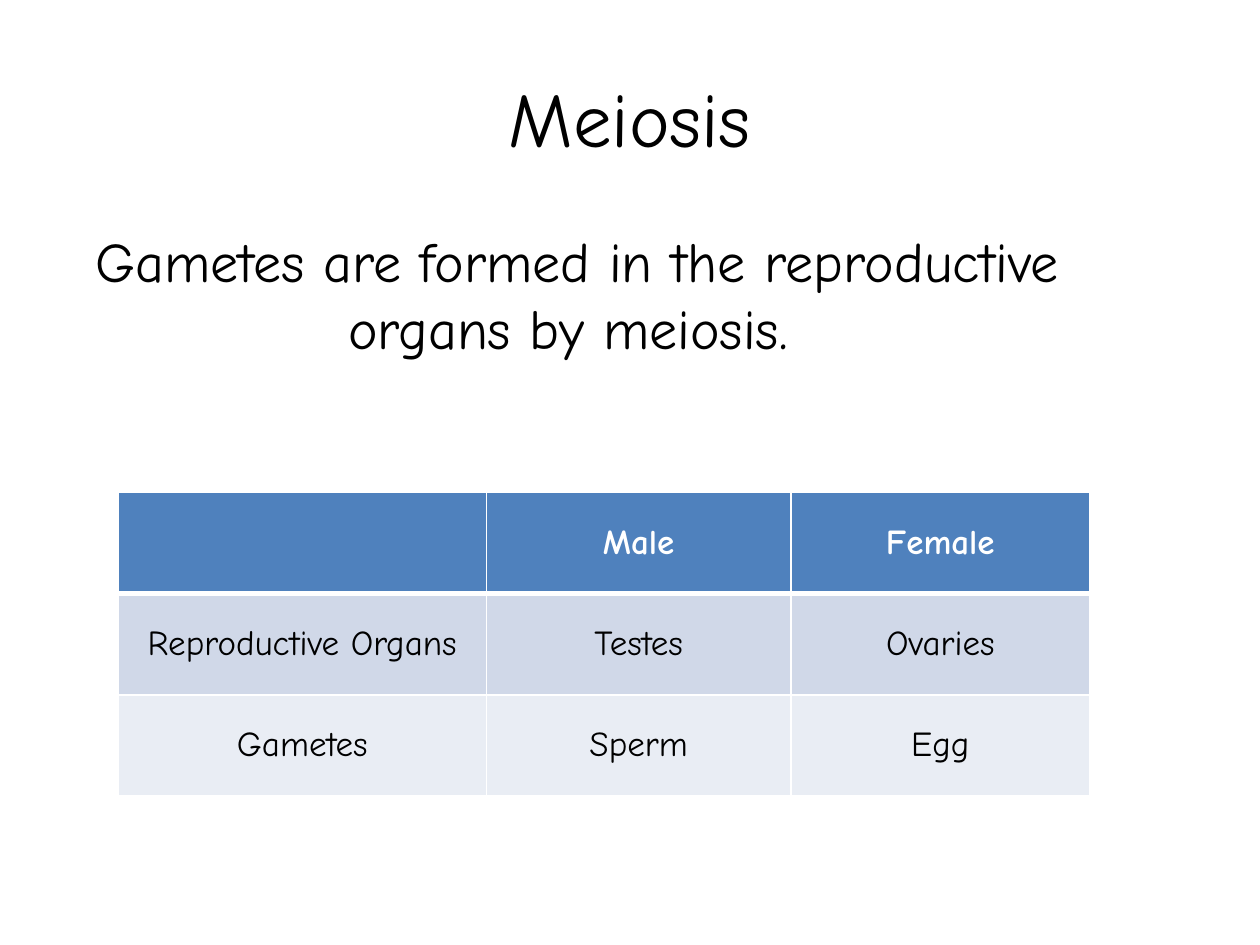
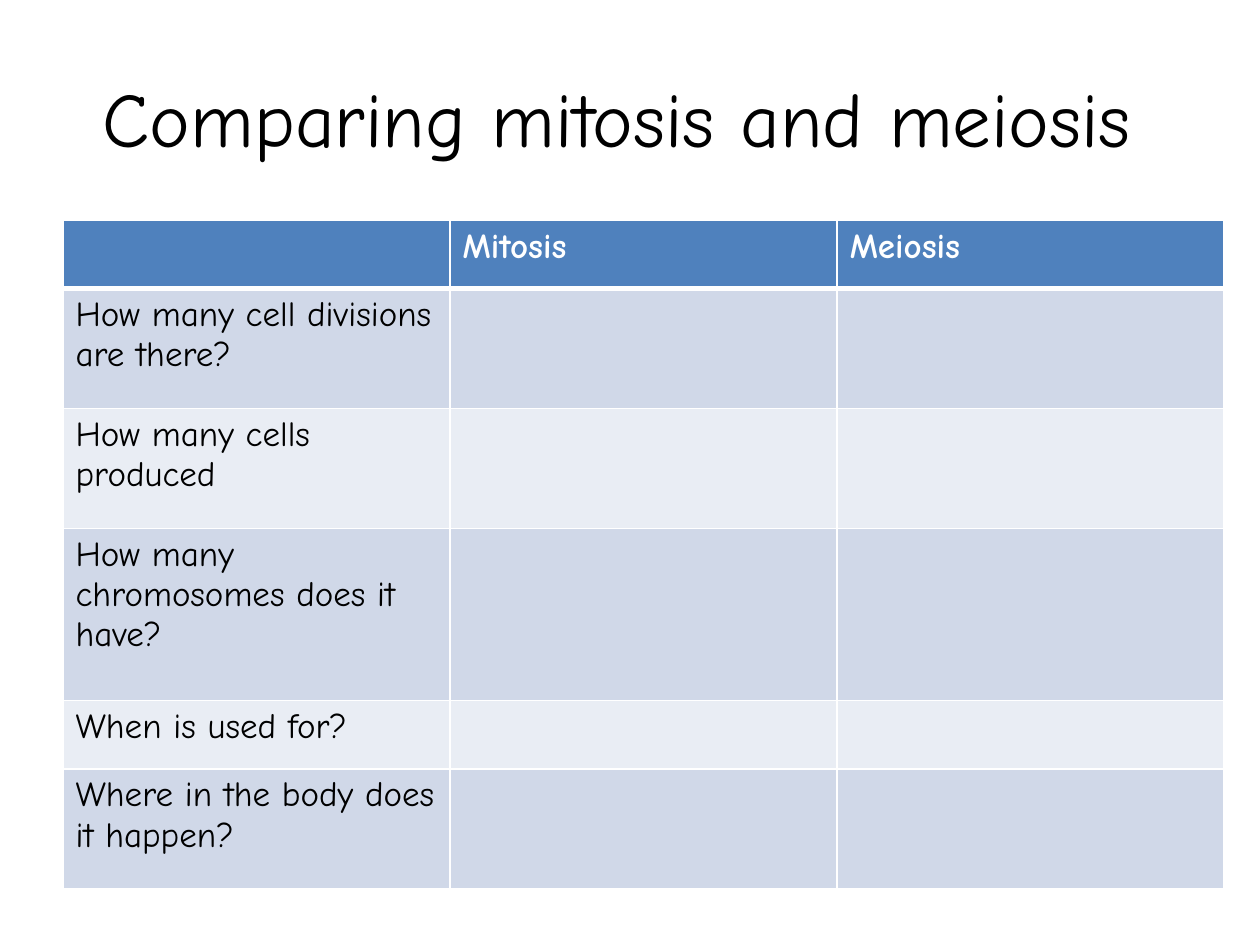
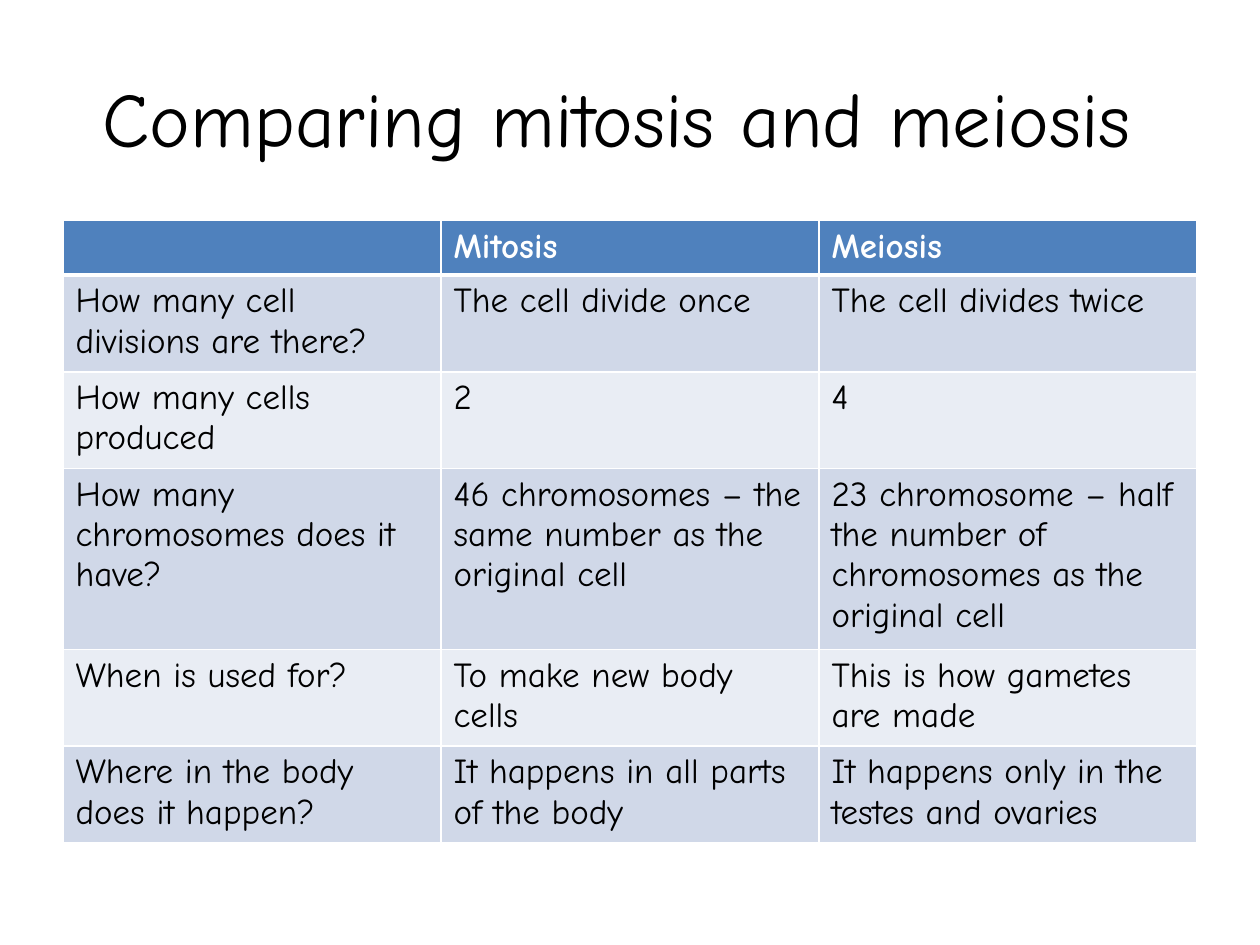
import pptx
import pptx.dml.color
import pptx.enum.text
import pptx.oxml
import pptx.oxml.ns
import pptx.util

Pt = pptx.util.Pt
ALIGN = pptx.enum.text.PP_ALIGN
ANCHOR = pptx.enum.text.MSO_ANCHOR

FONT = "Comic Neue"
COLORS = {
    "ink": "000000",
    "white": "FFFFFF",
    "head": "4F81BD",
    "odd": "D0D8E8",
    "even": "E9EDF4",
}
TITLE_BOX = (36, 21.6, 648, 90)
COMPARE = "Comparing mitosis and meiosis "
HEADS = ["", "Mitosis", "Meiosis"]
ASKS = [
    "How many cell divisions are there?",
    "How many cells produced",
    "How many chromosomes does it have?",
    "When is used for?",
    "Where in the body does it happen?",
]
REPLIES = [
    ("The cell divide once", "The cell divides twice"),
    ("2", "4"),
    ("46 chromosomes – the same number as the original cell",
     "23 chromosome – half the number of chromosomes as the original cell"),
    ("To make new body cells", "This is how gametes are made"),
    ("It happens in all parts of the body",
     "It happens only in the testes and ovaries"),
]


def tint(name):
    """Return the named colour."""
    return pptx.dml.color.RGBColor.from_string(COLORS[name])


def style(para, size, color="ink", bold=False, align=ALIGN.CENTER):
    """Set the font and alignment of a paragraph."""
    para.alignment = align
    font = para.font
    font.name, font.size, font.bold = FONT, Pt(size), bold
    font.color.rgb = tint(color)


def add_text(slide, box, text, size, anchor=ANCHOR.TOP, before=0):
    """Add centred text that wraps inside the box."""
    frame = slide.shapes.add_textbox(*map(Pt, box)).text_frame
    frame.word_wrap = True
    frame.vertical_anchor = anchor
    para = frame.paragraphs[0]
    para.text = text
    para.space_before = Pt(before)
    style(para, size)


def add_edges(cell, top, bottom):
    """Draw white cell borders, with top and bottom widths in points."""
    props = cell._tc.get_or_add_tcPr()
    space = pptx.oxml.ns.nsdecls("a")
    for side, width in zip("LRTB", (1, 1, top, bottom)):
        props.append(pptx.oxml.parse_xml(
            f'<a:ln{side} {space} w="{Pt(width)}"><a:solidFill>'
            f'<a:srgbClr val="{COLORS["white"]}"/>'
            f'</a:solidFill></a:ln{side}>'))


def add_grid(slide, box, rows, widths, heights,
             align=ALIGN.LEFT, anchor=ANCHOR.TOP):
    """Add a table with a header row and banded body rows."""
    frame = slide.shapes.add_table(len(rows), len(widths), *map(Pt, box))
    table = frame.table
    for col, width in zip(table.columns, widths):
        col.width = Pt(width)
    for row, height in zip(table.rows, heights):
        row.height = Pt(height)
    frame.height = Pt(box[3])
    for i, row in enumerate(rows):
        head = i == 0
        fill = "head" if head else ("even", "odd")[i % 2]
        for j, text in enumerate(row):
            cell = table.cell(i, j)
            add_edges(cell, 3 if i == 1 else 1, 3 if head else 1)
            cell.fill.solid()
            cell.fill.fore_color.rgb = tint(fill)
            cell.vertical_anchor = anchor
            para = cell.text_frame.paragraphs[0]
            if text:
                para.text = text
            style(para, 20, "white" if head else "ink", head, align)


def add_slide(deck, title):
    """Add a blank slide with its title."""
    slide = deck.slides.add_slide(deck.slide_layouts[6])
    add_text(slide, TITLE_BOX, title, 44, ANCHOR.MIDDLE)
    return slide


def add_intro(deck):
    """Build the slide on where gametes form."""
    slide = add_slide(deck, "Meiosis")
    add_text(slide, (36, 126, 588, 65.5),
             "Gametes are formed in the reproductive organs by meiosis. ",
             32, before=6.4)
    rows = [
        ("", "Male", "Female"),
        ("Reproductive Organs", "Testes", "Ovaries"),
        ("Gametes", "Sperm", "Egg"),
    ]
    add_grid(slide, (67.7, 281.5, 555, 173.4), rows, (210.2, 174.2, 170.6),
             [57.8] * 3, ALIGN.CENTER, ANCHOR.MIDDLE)


def add_compare(deck, replies, width, height, heights):
    """Build a slide that compares mitosis with meiosis."""
    slide = add_slide(deck, COMPARE)
    rows = [HEADS] + [(ask, *pair) for ask, pair in zip(ASKS, replies)]
    add_grid(slide, (36, 126, width, height), rows, [width / 3] * 3, heights)


def main():
    """Build and save the deck."""
    deck = pptx.Presentation()
    deck.slide_width, deck.slide_height = Pt(720), Pt(540)
    add_intro(deck)
    add_compare(deck, [("", "")] * len(ASKS), 663.6, 382,
                (39, 68.5, 68.5, 98.5, 39, 68.5))
    add_compare(deck, REPLIES, 648, 379.4, [29.2] * 6)
    deck.save("out.pptx")


if __name__ == "__main__":
    main()
